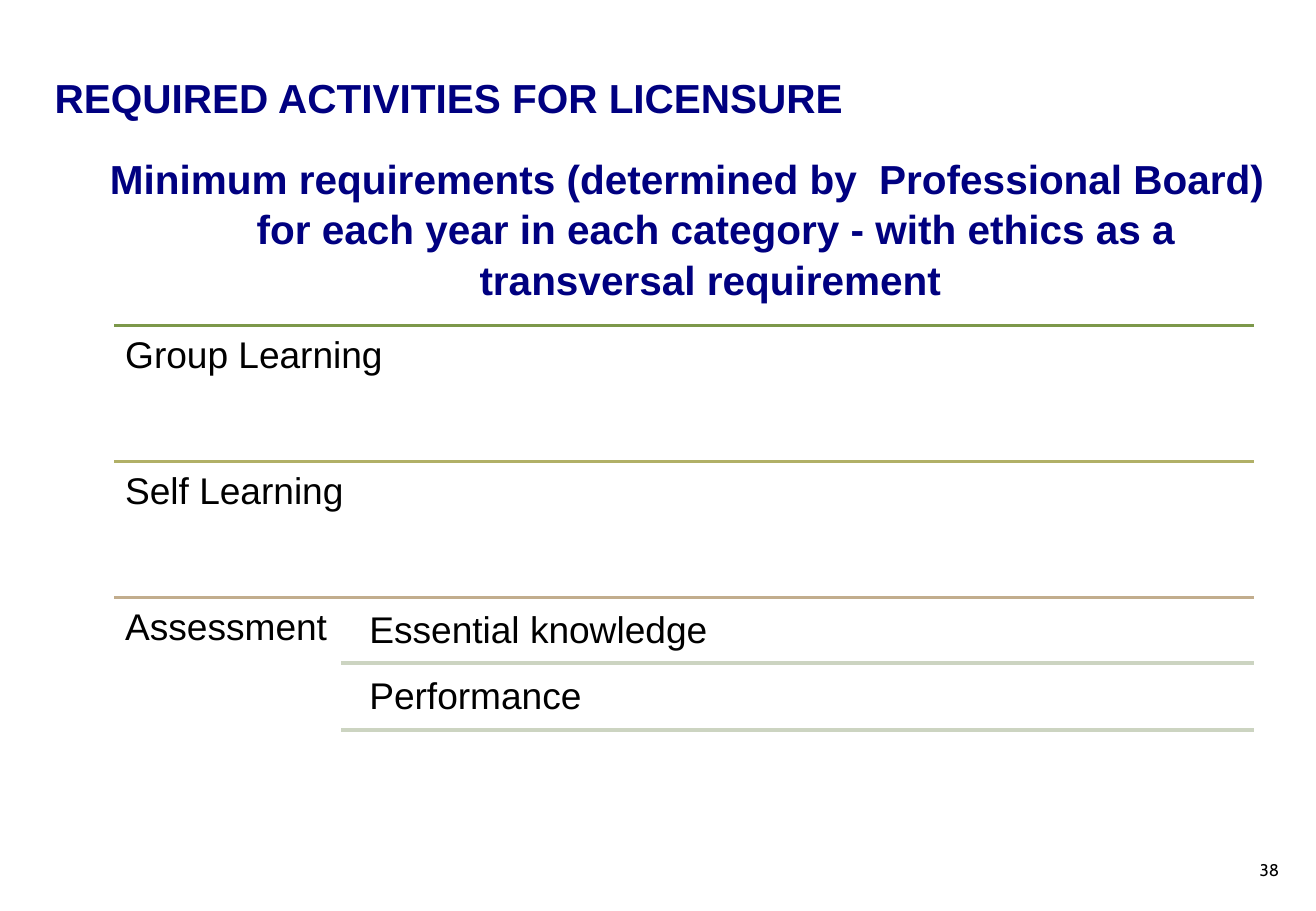
"""Build the slide on required activities for licensure."""
from pptx import Presentation
from pptx.dml.color import RGBColor
from pptx.enum.shapes import MSO_CONNECTOR, MSO_SHAPE
from pptx.enum.text import MSO_ANCHOR, PP_ALIGN
from pptx.oxml.ns import qn
from pptx.util import Inches, Pt
from lxml import etree

STRAIGHT = MSO_CONNECTOR.STRAIGHT
ELLIPSE = MSO_SHAPE.OVAL
TOP, MIDDLE = MSO_ANCHOR.TOP, MSO_ANCHOR.MIDDLE
LEFT, CENTER = PP_ALIGN.LEFT, PP_ALIGN.CENTER
NAVY, BLACK = "000080", "000000"
RIGHT_EDGE = 10.32


def write(shape, text, size, color, font="Arial", bold=False, align=LEFT, anchor=TOP):
    frame = shape.text_frame
    frame.word_wrap = True
    frame.vertical_anchor = anchor
    paragraph = frame.paragraphs[0]
    paragraph.text = text
    paragraph.alignment = align
    paragraph.font.name = font
    paragraph.font.size = Pt(size)
    paragraph.font.bold = bold
    paragraph.font.color.rgb = RGBColor.from_string(color)
    return paragraph


def add_rule(left, top, color):
    rule = slide.shapes.add_connector(
        STRAIGHT, Inches(left), Inches(top), Inches(RIGHT_EDGE), Inches(top))
    rule.line.color.rgb = RGBColor.from_string(color)
    rule.line.width = Pt(2)
    etree.SubElement(rule.element.spPr, qn("a:effectLst"))


prs = Presentation()
prs.slide_width, prs.slide_height = Inches(10.83), Inches(7.5)
slide = prs.slides.add_slide(prs.slide_layouts[5])

title = slide.shapes.title
title.left, title.top = Inches(0.35), Inches(0.5)
title.width, title.height = Inches(9.16), Inches(0.6)
write(title, "REQUIRED ACTIVITIES FOR LICENSURE", 24, NAVY, bold=True, anchor=MIDDLE)

requirements = slide.shapes.add_textbox(Inches(0.76), Inches(1.2), Inches(9.79), Inches(1.4))
statement = write(
    requirements,
    "Minimum requirements (determined by  Professional Board)  for each year "
    "in each category - with ethics as a transversal requirement",
    24, NAVY, bold=True, align=CENTER)
statement.line_spacing = 1.04
indent = statement._p.get_or_add_pPr()
indent.set("marL", str(Inches(0.38)))
indent.set("indent", str(-Inches(0.38)))

page_number = slide.shapes.add_shape(
    ELLIPSE, Inches(10.18), Inches(6.95), Inches(0.6), Inches(0.55))
page_number.shadow.inherit = False
page_number.fill.background()
page_number.line.fill.background()
write(page_number, "38", 10, BLACK, font="Cabin")

categories = [("Group Learning", 4.71, "7C984A"),
              ("Self Learning", 3.95, "B1B067"),
              ("Assessment", 1.88, "C2AD8D")]
labels = []
for row, (category, width, color) in enumerate(categories):
    top = 2.68 + 1.12 * row
    add_rule(0.94, top, color)
    labels.append((category, 0.94, top, width, 1.12))

for row, assessed in enumerate(["Essential knowledge", "Performance"]):
    top = 4.94 + 0.55 * row
    add_rule(2.81, top + 0.52, "CCD4C1")
    labels.append((assessed, 2.95, top, 7.36, 0.52))

for text, left, top, width, height in labels:
    label = slide.shapes.add_textbox(Inches(left), Inches(top), Inches(width), Inches(height))
    frame = label.text_frame
    frame.margin_left = frame.margin_right = Inches(0.09)
    frame.margin_top = frame.margin_bottom = Inches(0.09)
    write(label, text, 22, BLACK).line_spacing = 0.9

prs.save("out.pptx")
